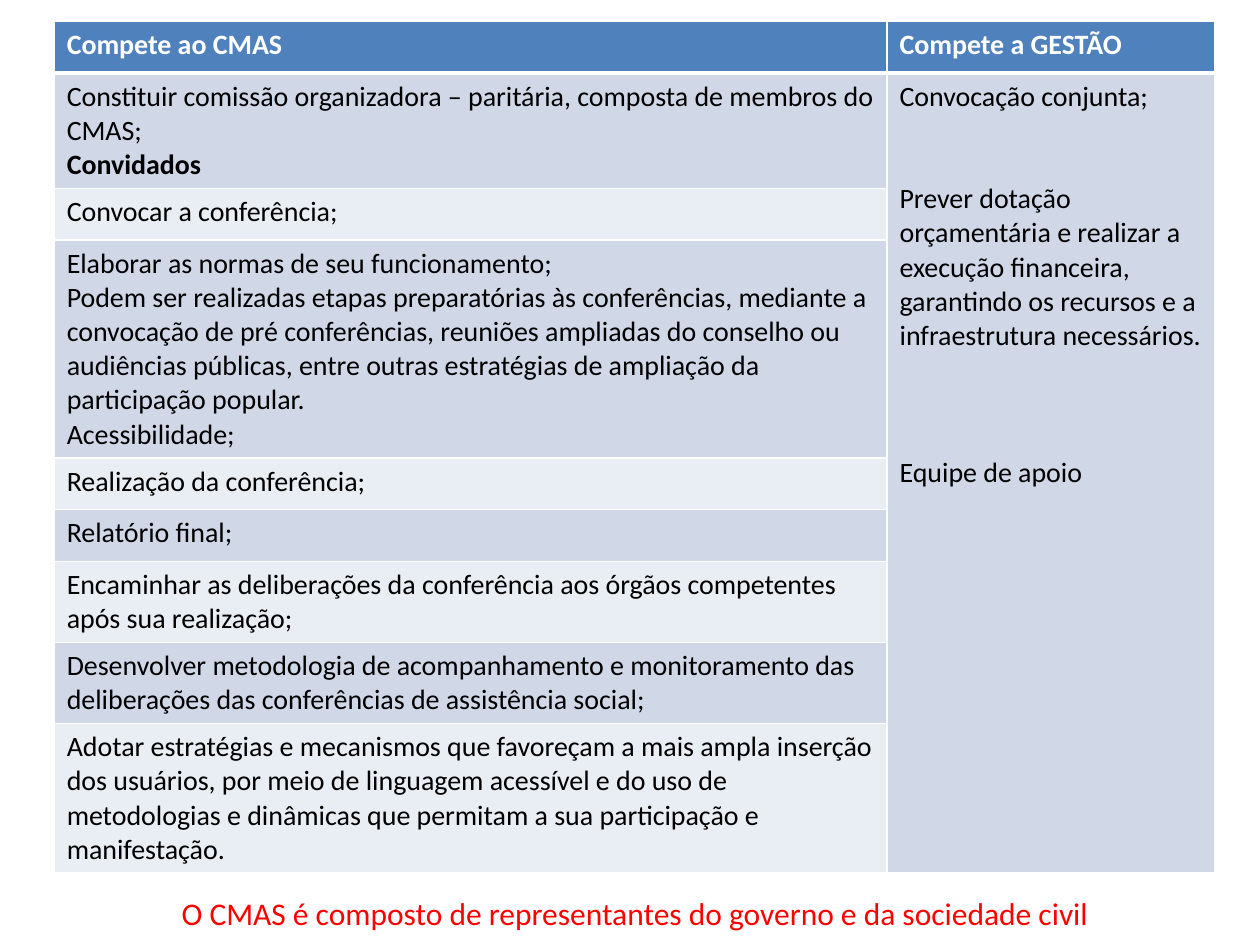
"""Build the slide comparing the duties of the CMAS and of the management."""
from dataclasses import dataclass

from lxml import etree
from pptx import Presentation
from pptx.dml.color import RGBColor
from pptx.enum.text import PP_ALIGN
from pptx.oxml.ns import qn
from pptx.util import Inches, Pt

CENTER = PP_ALIGN.CENTER


@dataclass(frozen=True)
class Theme:
    font: str = "Calibri"
    body_size: int = 16
    note_size: int = 18
    header: str = "4F81BD"
    bands: tuple = ("D0D8E8", "E9EDF4")
    white: str = "FFFFFF"
    text: str = "000000"
    note: str = "FF0000"


theme = Theme()


def add_text(paragraph, text, size, color, bold=False):
    run = paragraph.add_run()
    run.text = text
    run.font.name = theme.font
    run.font.size = Pt(size)
    run.font.bold = bold
    run.font.color.rgb = RGBColor.from_string(color)


def style_cell(cell, fill, top=1, bottom=1):
    cell.fill.solid()
    cell.fill.fore_color.rgb = RGBColor.from_string(fill)
    properties = cell._tc.get_or_add_tcPr()
    widths = {"a:lnL": 1, "a:lnR": 1, "a:lnT": top, "a:lnB": bottom}
    for position, (side, width) in enumerate(widths.items()):
        border = etree.Element(qn(side), w=str(Pt(width)))
        solid = etree.SubElement(border, qn("a:solidFill"))
        etree.SubElement(solid, qn("a:srgbClr"), val=theme.white)
        properties.insert(position, border)


headers = ["Compete ao CMAS", "Compete a GESTÃO"]
council_duties = [
    [
        "Constituir comissão organizadora – paritária, composta de membros do CMAS;",
        "Convidados",
    ],
    ["Convocar a conferência;"],
    [
        "Elaborar as normas de seu funcionamento;",
        "Podem ser realizadas etapas preparatórias às conferências, mediante a "
        "convocação de pré conferências, reuniões ampliadas do conselho ou "
        "audiências públicas, entre outras estratégias de ampliação da "
        "participação popular.",
        "Acessibilidade;",
    ],
    ["Realização da conferência;"],
    ["Relatório final;"],
    [
        "Encaminhar as deliberações da conferência aos órgãos competentes "
        "após sua realização;"
    ],
    [
        "Desenvolver metodologia de acompanhamento e monitoramento das "
        "deliberações das conferências de assistência social;"
    ],
    [
        "Adotar estratégias e mecanismos que favoreçam a mais ampla inserção "
        "dos usuários, por meio de linguagem acessível e do uso de "
        "metodologias e dinâmicas que permitam a sua participação e "
        "manifestação."
    ],
]
management_duties = [
    ("Convocação conjunta;", 0),
    (
        "Prever dotação orçamentária e realizar a execução financeira, "
        "garantindo os recursos e a infraestrutura necessários.",
        39,
    ),
    ("Equipe de apoio", 58.5),
]
emphasized = {"Convidados"}

prs = Presentation()
prs.slide_width = Inches(10)
prs.slide_height = Inches(7.5)
slide = prs.slides.add_slide(prs.slide_layouts[6])

duties_frame = slide.shapes.add_table(
    len(council_duties) + 1, len(headers),
    Inches(0.43), Inches(0.17), Inches(9.21), Inches(6.66),
)
duties = duties_frame.table
for column, width in zip(duties.columns, (6.61, 2.6)):
    column.width = Inches(width)
for row in duties.rows:
    row.height = Inches(0.41)
duties_frame.height = Inches(6.66)

for column_index, header in enumerate(headers):
    header_cell = duties.cell(0, column_index)
    style_cell(header_cell, theme.header, bottom=3)
    add_text(header_cell.text_frame.paragraphs[0], header,
             theme.body_size, theme.white, bold=True)

for row_index, duty_lines in enumerate(council_duties, start=1):
    band = theme.bands[(row_index - 1) % 2]
    top = 3 if row_index == 1 else 1
    council_cell = duties.cell(row_index, 0)
    style_cell(council_cell, band, top=top)
    style_cell(duties.cell(row_index, 1), theme.bands[0], top=top)
    council_text = council_cell.text_frame
    for line_index, line in enumerate(duty_lines):
        paragraph = council_text.add_paragraph() if line_index else council_text.paragraphs[0]
        add_text(paragraph, line, theme.body_size, theme.text, line in emphasized)

management_cell = duties.cell(1, 1)
management_cell.merge(duties.cell(len(council_duties), 1))
management_text = management_cell.text_frame
for duty_index, (duty, gap) in enumerate(management_duties):
    paragraph = management_text.add_paragraph() if duty_index else management_text.paragraphs[0]
    paragraph.space_before = Pt(gap)
    add_text(paragraph, duty, theme.body_size, theme.text)

composition_note = slide.shapes.add_textbox(
    Inches(1.14), Inches(7.05), Inches(7.8), Inches(0.4)
).text_frame
composition_note.word_wrap = True
composition_note.paragraphs[0].alignment = CENTER
add_text(composition_note.paragraphs[0],
         "O CMAS é composto de representantes do governo e da sociedade civil",
         theme.note_size, theme.note)

prs.save("out.pptx")
